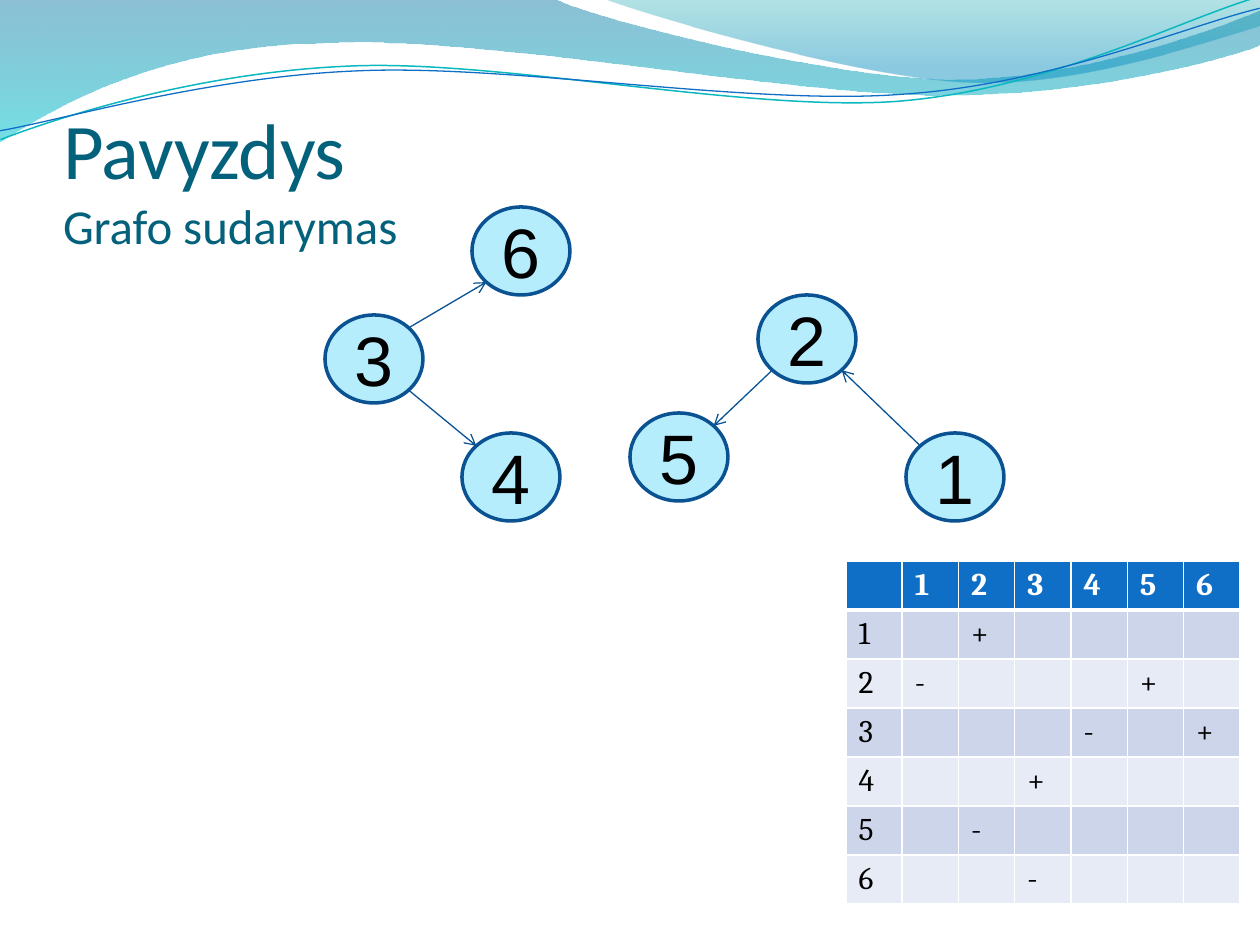
import math

import lxml.etree
import pptx
import pptx.dml.color
import pptx.enum.shapes
import pptx.enum.text
import pptx.oxml.ns
import pptx.util

ALIGN = pptx.enum.text.PP_ALIGN
ANCHOR = pptx.enum.text.MSO_ANCHOR


def px(length):
    """Turn pixels into EMU."""
    return pptx.util.Emu(round(length * 914400 / 126))


def colour(value):
    """Turn a hex string into a colour."""
    return pptx.dml.color.RGBColor.from_string(value)


def add_xml(parent, tag, **attributes):
    """Append a DrawingML element and return it."""
    return lxml.etree.SubElement(parent, pptx.oxml.ns.qn(tag), attributes)


def write(para, text, font="Calibri", size=18, fill="000000", bold=False, align=ALIGN.LEFT):
    """Add formatted text to a paragraph."""
    para.alignment = align
    span = para.add_run()
    span.text = text
    span.font.name = font
    span.font.size = pptx.util.Pt(size)
    span.font.bold = bold
    span.font.color.rgb = colour(fill)


class GraphSlide:
    """Hold the style and the current page."""

    node_size = (98, 88)
    node_fill, node_line, edge_line = "B5EDFD", "0B5292", "095295"
    title_fill, header_fill, row_fills = "04617B", "0F6FC6", ("CCD5EA", "E7EBF5")

    def __init__(self, deck):
        """Add a title-only page."""
        self.page = deck.slides.add_slide(deck.slide_layouts[5])

    def outline(self, segments, close):
        """Draw a freeform of lines (x, y) and cubic curves (six numbers)."""
        anchors = [(px(segment[-2]), px(segment[-1])) for segment in segments]
        builder = self.page.shapes.build_freeform(*anchors[0], scale=1.0)
        builder.add_line_segments(anchors[1:], close=close)
        shape = builder.convert_to_shape()
        shape.shadow.inherit = False
        lines = list(shape._element.iter(pptx.oxml.ns.qn("a:lnTo")))
        for line, segment in zip(lines, segments[1:]):
            if len(segment) == 6:
                line.tag = pptx.oxml.ns.qn("a:cubicBezTo")
                line.remove(line[0])
                for x, y in zip(segment[::2], segment[1::2]):
                    add_xml(line, "a:pt", x=str(px(x) - shape.left), y=str(px(y) - shape.top))
        return shape

    def wave(self, segments, stops):
        """Draw a closed wave with a translucent vertical gradient."""
        shape = self.outline(segments, True)
        shape.line.fill.background()
        shape.fill.gradient()
        shape.fill.gradient_angle = 270
        for stop, (position, fill, opacity) in zip(shape.fill.gradient_stops, stops):
            stop.position = position
            stop.color.rgb = colour(fill)
        tints = shape._element.spPr.iter(pptx.oxml.ns.qn("a:srgbClr"))
        for tint, (position, fill, opacity) in zip(tints, stops):
            add_xml(tint, "a:alpha", val=str(opacity * 1000))

    def strand(self, segments, fill, width):
        """Draw a thin open curve, slightly tilted."""
        shape = self.outline(segments, False)
        shape.rotation = 357.3
        shape.fill.background()
        shape.line.color.rgb = colour(fill)
        shape.line.width = pptx.util.Pt(width)

    def title(self, heading, subheading, left, top, width, height):
        """Place the two-line title in front of what is drawn so far."""
        box = self.page.shapes.title
        self.page.shapes._spTree.append(box._element)
        box.left, box.top, box.width, box.height = map(px, (left, top, width, height))
        frame = box.text_frame
        frame.auto_size = pptx.enum.text.MSO_AUTO_SIZE.NONE
        frame.vertical_anchor = ANCHOR.BOTTOM
        frame.margin_left = frame.margin_right = frame.margin_bottom = 0
        frame.margin_top = px(6)
        para = frame.paragraphs[0]
        write(para, heading, size=45, fill=self.title_fill)
        para.add_line_break()
        write(para, subheading, size=27.9, fill=self.title_fill)

    def node(self, label, left, top):
        """Draw a labelled graph node."""
        oval = pptx.enum.shapes.MSO_SHAPE.OVAL
        shape = self.page.shapes.add_shape(oval, px(left), px(top), *map(px, self.node_size))
        shape.shadow.inherit = False
        shape.fill.solid()
        shape.fill.fore_color.rgb = colour(self.node_fill)
        shape.line.color.rgb = colour(self.node_line)
        shape.line.width = pptx.util.Pt(2)
        shape.text_frame.vertical_anchor = ANCHOR.MIDDLE
        write(shape.text_frame.paragraphs[0], label, font="Arial", size=40, align=ALIGN.CENTER)

    def edge(self, start, end):
        """Draw an arrow between the facing diagonals of two nodes."""
        reach = [math.copysign(size * math.sqrt(0.125), b - a) for size, a, b in zip(self.node_size, start, end)]
        centre = [size / 2 for size in self.node_size]
        begin = [px(a + c + r) for a, c, r in zip(start, centre, reach)]
        finish = [px(b + c - r) for b, c, r in zip(end, centre, reach)]
        straight = pptx.enum.shapes.MSO_CONNECTOR.STRAIGHT
        arrow = self.page.shapes.add_connector(straight, *begin, *finish)
        arrow.line.color.rgb = colour(self.edge_line)
        arrow.line.width = pptx.util.Pt(0.75)
        add_xml(arrow.line._get_or_add_ln(), "a:tailEnd", type="arrow")
        add_xml(arrow._element.spPr, "a:effectLst")

    def graph(self, nodes, edges):
        """Draw nodes by label and place, then edges by pairs of labels."""
        for label, place in nodes.items():
            self.node(label, *place)
        for start, end in edges:
            self.edge(nodes[start], nodes[end])

    def cell(self, cell, text, row):
        """Fill, border and write one matrix cell."""
        header = row == 0
        properties = cell._tc.get_or_add_tcPr()
        for side in "LRTB":
            thick = (side == "B" and header) or (side == "T" and row == 1)
            border = add_xml(properties, f"a:ln{side}", w=str(pptx.util.Pt(3 if thick else 1)))
            add_xml(add_xml(border, "a:solidFill"), "a:srgbClr", val="FFFFFF")
        cell.fill.solid()
        cell.fill.fore_color.rgb = colour(self.header_fill if header else self.row_fills[(row - 1) % 2])
        cell.vertical_anchor = ANCHOR.MIDDLE
        cell.margin_top = cell.margin_bottom = px(3)
        if text:
            write(cell.text_frame.paragraphs[0], text, font="Cambria", fill="FFFFFF" if header else "000000", bold=header)

    def matrix(self, labels, marks, left, top, width, height):
        """Draw the table of marks between labelled nodes."""
        count = len(labels) + 1
        box = self.page.shapes.add_table(count, count, px(left), px(top), px(width), px(height))
        names = ["", *labels]
        for r, row_name in enumerate(names):
            box.table.rows[r].height = px(height / count)
            box.table.columns[r].width = px(width / count)
            for c, column_name in enumerate(names):
                text = column_name if r == 0 else row_name if c == 0 else marks.get(row_name + column_name, "")
                self.cell(box.table.cell(r, c), text, r)


def main():
    """Build the graph slide."""
    deck = pptx.Presentation()
    deck.slide_width, deck.slide_height = px(1260), px(945)
    slide = GraphSlide(deck)
    slide.wave(
        [(0, 0), (554, -1), (600, 21, 837, 79, 955, 79), (1075, 79, 1207, 33, 1260, 11), (1261, 45),
         (1239, 55, 1096, 96, 940, 95), (784, 95, 481, 35, 324, 43), (163, 45, 58, 105, -1, 142), (0, 0)],
        [(0, "0074A1", 45), (1, "00C6CF", 55)])
    slide.wave(
        [(604, -1), (641, 14, 859, 78, 969, 82), (1079, 87, 1211, 40, 1260, 26), (1260, 0), (604, -1)],
        [(0, "00A1A9", 30), (0.8, "008BBF", 45)])
    slide.strand(
        [(-2, 110), (58, 90, 199, 52, 350, 53), (499, 53, 745, 118, 896, 114), (1049, 109, 1184, 45, 1260, 27)],
        "0AB8BF", 0.85)
    slide.strand(
        [(-2, 101), (57, 94, 207, 57, 357, 58), (509, 58, 750, 112, 902, 107), (1052, 104, 1188, 52, 1262, 38)],
        "0F6FC6", 0.75)
    slide.graph({"3": (325, 315), "4": (462, 433), "6": (472, 207)}, ("36", "34"))
    slide.title("Pavyzdys", "Grafo sudarymas", 63, 97, 1134, 157)
    marks = {"12": "+", "21": "-", "25": "+", "34": "-", "36": "+", "43": "+", "52": "-", "63": "-"}
    slide.matrix("123456", marks, 846, 561, 394, 343)
    slide.graph({"1": (906, 433), "2": (758, 295), "5": (630, 413)}, ("12", "25"))
    deck.save("out.pptx")


if __name__ == "__main__":
    main()
